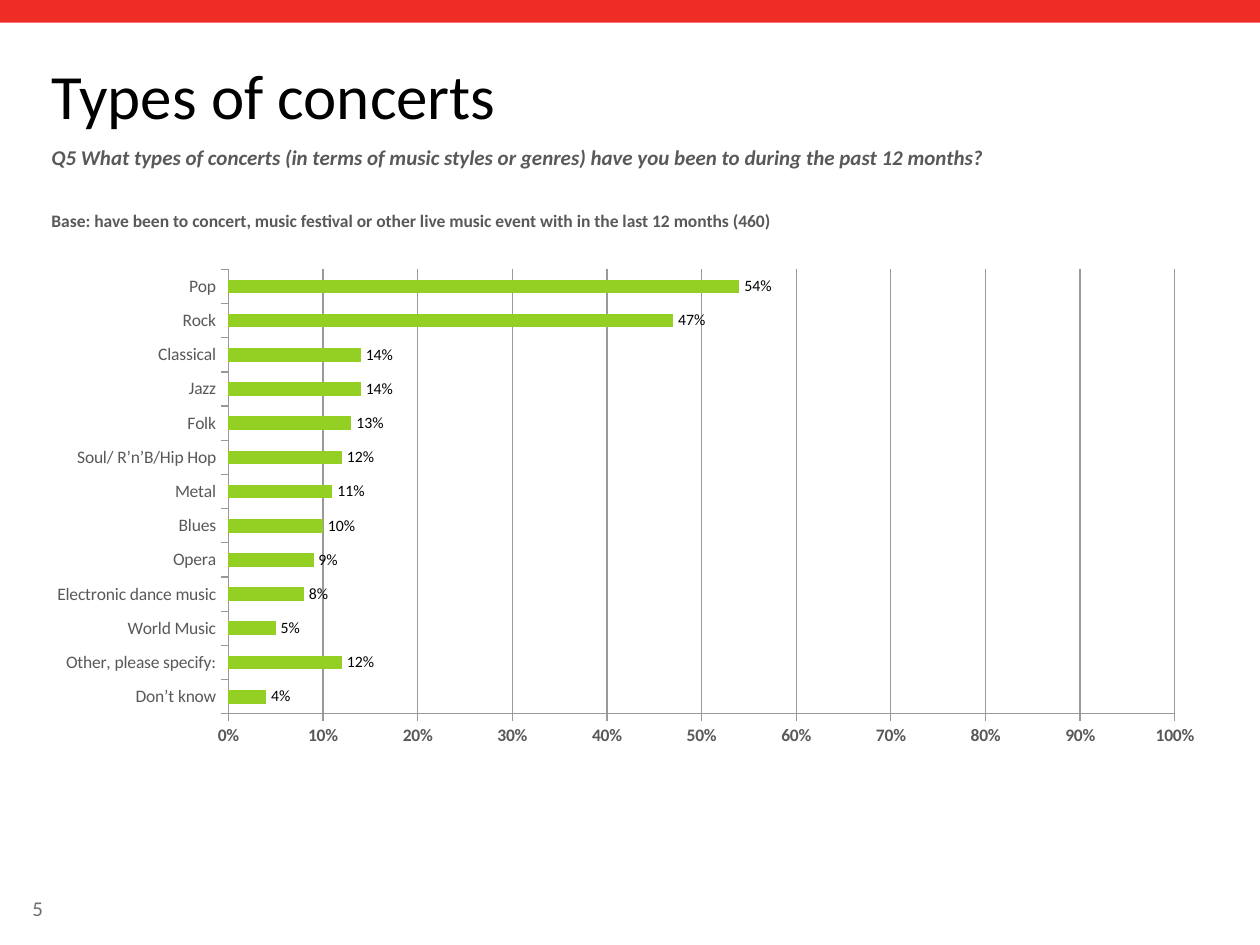
from lxml import etree
from pptx import Presentation
from pptx import util as u
from pptx.chart import data
from pptx.dml.color import RGBColor
from pptx.enum import chart as ch, shapes, text
from pptx.oxml import ns

RED = RGBColor(0xEE, 0x2D, 0x27)
GREEN = RGBColor(0x93, 0xD0, 0x23)
BLACK = RGBColor(0, 0, 0)
DARK = RGBColor(0x59, 0x59, 0x59)
GREY = RGBColor(0x6D, 0x6F, 0x71)
LINE = RGBColor(0x99, 0x99, 0x99)

GENRES = [
    ("Don’t know", 0.04), ("Other, please specify:", 0.12),
    ("World Music", 0.05), ("Electronic dance music", 0.08),
    ("Opera", 0.09), ("Blues", 0.1), ("Metal", 0.11),
    ("Soul/ R’n’B/Hip Hop", 0.12), ("Folk", 0.13), ("Jazz", 0.14),
    ("Classical", 0.14), ("Rock", 0.47), ("Pop", 0.54),
]


def put(obj, **vals):
    for key, val in vals.items():
        setattr(obj, key, val)


class Deck:
    face = "Calibri"

    def __init__(self, wide, high):
        self.prs = Presentation()
        put(self.prs, slide_width=u.Inches(wide), slide_height=u.Inches(high))
        self.slide = self.prs.slides.add_slide(self.prs.slide_layouts[6])

    def style(self, font, size, color, bold=False, italic=False):
        put(font, name=self.face, size=u.Pt(size), bold=bold, italic=italic)
        font.color.rgb = color

    def rect(self, box, color):
        bar = self.slide.shapes.add_shape(
            shapes.MSO_SHAPE.RECTANGLE, *map(u.Inches, box))
        bar.shadow.inherit = False
        bar.fill.solid()
        bar.fill.fore_color.rgb = color
        bar.line.fill.background()

    def text(self, box, words, anchor, *look):
        frame = self.slide.shapes.add_textbox(*map(u.Inches, box)).text_frame
        put(frame, word_wrap=True, vertical_anchor=anchor)
        run = frame.paragraphs[0].add_run()
        run.text = words
        self.style(run.font, *look)

    def bars(self, box, rows, plot):
        """Draw a bar chart; plot is the inner plot area in chart fractions."""
        source = data.CategoryChartData(number_format="0%")
        source.categories = [name for name, _ in rows]
        source.add_series("Series 1", [val for _, val in rows])
        chart = self.slide.shapes.add_chart(
            ch.XL_CHART_TYPE.BAR_CLUSTERED, *map(u.Inches, box), source).chart
        put(chart, has_legend=False, has_title=False)
        self.style(chart.font, 18, GREY)
        chart.font.name = "Manrope"

        group = chart.plots[0]
        put(group, gap_width=150, overlap=-10, vary_by_categories=False,
            has_data_labels=True)
        fill = group.series[0].format.fill
        fill.solid()
        fill.fore_color.rgb = GREEN
        tags = group.data_labels
        put(tags, show_value=True, number_format="0%",
            number_format_is_linked=False,
            position=ch.XL_LABEL_POSITION.OUTSIDE_END)
        self.style(tags.font, 9, BLACK)

        for axis, bold in (chart.category_axis, False), (chart.value_axis, True):
            put(axis, major_tick_mark=ch.XL_TICK_MARK.OUTSIDE,
                minor_tick_mark=ch.XL_TICK_MARK.NONE, has_major_gridlines=bold)
            self.style(axis.tick_labels.font, 10, DARK, bold)
            self.rule(axis.format.line)
        put(axis, minimum_scale=0, maximum_scale=1, major_unit=0.1,
            tick_label_position=ch.XL_TICK_LABEL_POSITION.LOW)
        put(axis.tick_labels, number_format="0%", number_format_is_linked=False)
        self.rule(axis.major_gridlines.format.line)
        self.place(chart, plot)

    def rule(self, line):
        line.color.rgb = LINE
        line.width = u.Pt(0.75)

    def place(self, chart, plot):
        area = chart.plots[0]._element.getparent()
        for old in area.findall(ns.qn("c:layout")):
            area.remove(old)
        layout = etree.Element(ns.qn("c:layout"))
        manual = etree.SubElement(layout, ns.qn("c:manualLayout"))
        vals = {"layoutTarget": "inner", "xMode": "edge", "yMode": "edge"}
        vals.update(zip("xywh", plot))
        for tag, val in vals.items():
            etree.SubElement(manual, ns.qn("c:" + tag), val=str(val))
        area.insert(0, layout)


def main():
    deck = Deck(10, 7.5)
    top, mid, low = (text.MSO_ANCHOR.TOP, text.MSO_ANCHOR.MIDDLE,
                     text.MSO_ANCHOR.BOTTOM)
    left, wide = 0.31, 9.39
    deck.rect((0, 0, 10, 0.18), RED)
    deck.text((0.16, 7.06, 0.77, 0.3), "5", mid, 12, GREY)
    deck.text((left, 0.34, wide, 0.76), "Types of concerts", low, 36, BLACK)
    deck.text((left, 1.1, wide, 0.51),
              "Q5 What types of concerts (in terms of music styles or genres) "
              "have you been to during the past 12 months?",
              top, 12, DARK, True, True)
    deck.bars((left, 2.06, wide, 3.92), GENRES, (0.16, 0.02, 0.8, 0.9))
    deck.text((left, 1.62, wide, 0.43),
              "Base: have been to concert, music festival or other live music "
              "event with in the last 12 months (460)",
              top, 10, DARK, True)
    deck.prs.save("out.pptx")


if __name__ == "__main__":
    main()
